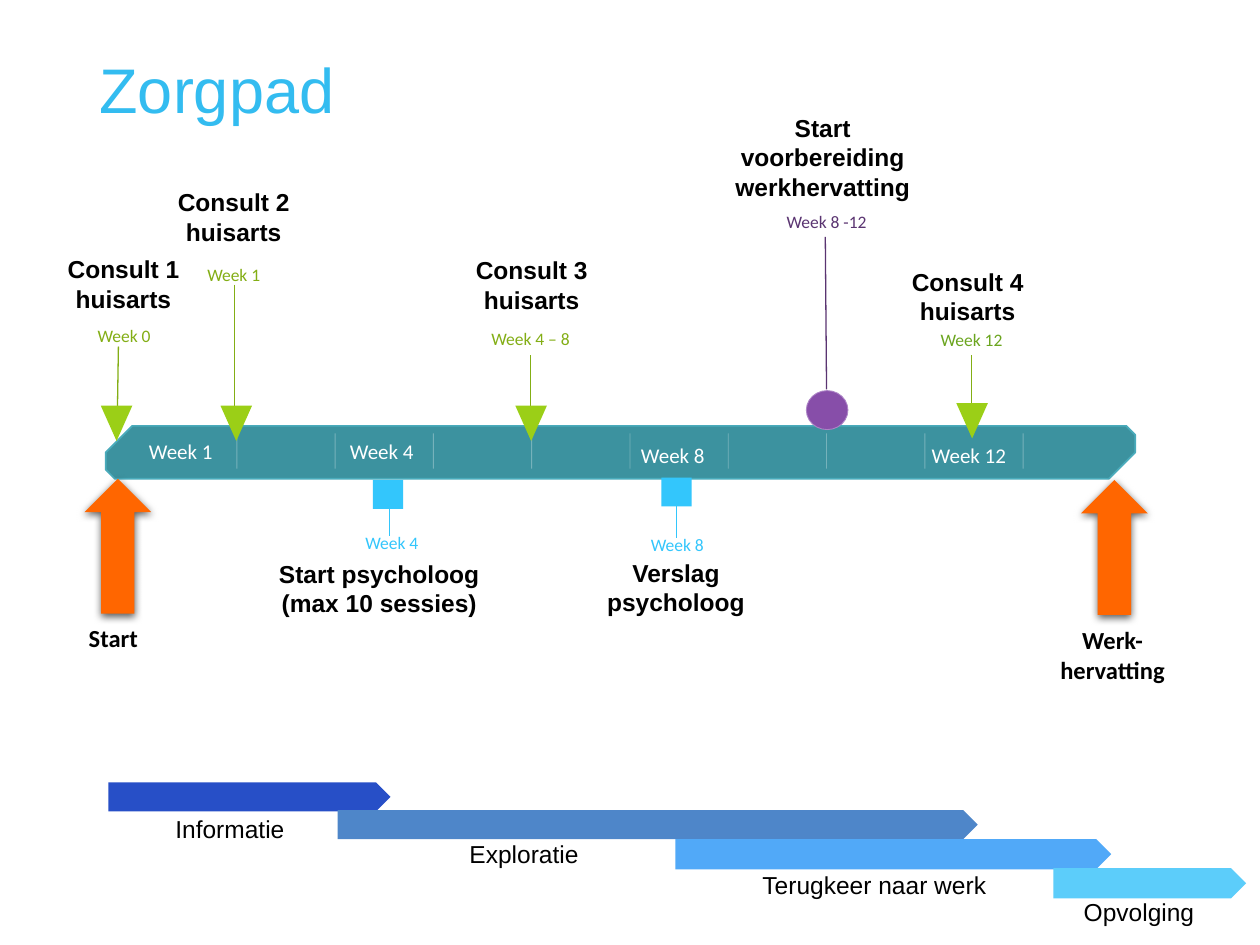
from lxml.etree import SubElement
from pptx import Presentation
from pptx.dml.color import RGBColor as Rgb
from pptx.enum.shapes import MSO_CONNECTOR as Link, MSO_SHAPE as Kind
from pptx.enum.text import MSO_ANCHOR as Anchor, PP_ALIGN as Align
from pptx.oxml.ns import qn
from pptx.util import Inches, Pt

COLS, ROWS = 100, 75
CELL = Inches(0.1)
HUES = {
    "title": "33BCF0", "text": "000000", "white": "FFFFFF",
    "bar": "3C929F", "edge": "4AABBB", "lime": "9BCF17",
    "green": "83AE15", "leaf": "6BA51F", "sky": "33C6FC",
    "plum": "5A3471", "dot": "874EA9", "rim": "AD84C6",
    "arrow": "FF6600", "info": "274FC7", "explore": "4E86C9",
    "back": "51A9F8", "follow": "5CCDFA",
}


def grid(*cells):
    return [round(n * CELL) for n in cells]


def hue(name):
    return Rgb.from_string(HUES[name])


def add_form(slide, kind, box, fill, edge=None, width=1):
    form = slide.shapes.add_shape(kind, *grid(*box))
    form.shadow.inherit = False
    form.fill.solid()
    form.fill.fore_color.rgb = hue(fill)
    if edge:
        form.line.color.rgb = hue(edge)
        form.line.width = Pt(width)
    else:
        form.line.fill.background()
    return form


def add_line(slide, start, end, color, width=0.75, alpha=None):
    line = slide.shapes.add_connector(Link.STRAIGHT, *grid(*start, *end))
    line.line.color.rgb = hue(color)
    line.line.width = Pt(width)
    props = line._element.spPr
    SubElement(props, qn("a:effectLst"))
    if alpha:
        tint = props.find(".//" + qn("a:srgbClr"))
        SubElement(tint, qn("a:alpha"), val=str(alpha * 1000))


def add_text(slide, mid, size, text, pt, color="text", font="Arial",
             bold=False, align=Align.CENTER):
    (x, y), (w, h) = mid, size
    frame = slide.shapes.add_textbox(*grid(x - w / 2, y - h / 2, w, h)).text_frame
    frame.word_wrap = True
    frame.vertical_anchor = Anchor.MIDDLE
    frame.margin_left = frame.margin_right = 0
    frame.margin_top = frame.margin_bottom = 0
    frame.text = text
    for para in frame.paragraphs:
        para.alignment = align
        para.font.size = Pt(pt)
        para.font.name = font
        para.font.bold = bold
        para.font.color.rgb = hue(color)


def add_week(slide, mid, text, color, pt=10):
    add_text(slide, mid, (8.4, 2), text, pt, color, "Calibri")


def add_head(slide, mid, width, text, rows=2, font="Arial"):
    add_text(slide, mid, (width, rows * 2.4), text, 14, font=font, bold=True)


def add_stems(slide):
    for start, end, color in [
        ((30.9, 38.7), (30.9, 42.5), "sky"),
        ((53.7, 39), (53.7, 42.7), "sky"),
        ((9.4, 27.5), (9.3, 33.9), "green"),
        ((18.6, 22.6), (18.6, 33.7), "green"),
        ((42.1, 28.2), (42.1, 32.2), "green"),
        ((77.1, 28.2), (77.1, 33.8), "green"),
        ((65.5, 18.8), (65.6, 30.9), "plum"),
    ]:
        add_line(slide, start, end, color)


def add_bar(slide):
    bar = add_form(slide, Kind.SNIP_2_DIAG_RECTANGLE,
                   (8.4, 33.8, 81.7, 4.2), "bar", "edge")
    bar.adjustments[0], bar.adjustments[1] = 1, 0.17
    for step in range(9):
        x = 18.8 + 7.8 * step
        add_line(slide, (x, 34.4), (x, 37.2), "white", 0.5, 30)
    for mid, text in [((14.35, 35.8), "Week 1"), ((30.3, 35.8), "Week 4"),
                      ((53.4, 36.1), "Week 8"), ((76.9, 36.1), "Week 12")]:
        add_week(slide, mid, text, "white", 12)


def add_visits(slide):
    for num, head, mid, week, color, tip in [
        (1, (9.8, 22.5), (9.85, 26.6), "Week 0", "green", (8, 32.2)),
        (2, (18.55, 17.2), (18.55, 21.8), "Week 1", "green", (17.5, 32.2)),
        (3, (42.2, 22.6), (42.1, 26.9), "Week 4 – 8", "green", (40.9, 32.2)),
        (4, (76.8, 23.5), (77.1, 26.95), "Week 12", "leaf", (75.9, 32)),
    ]:
        add_form(slide, Kind.ISOSCELES_TRIANGLE, (*tip, 2.5, 2.8), "lime").rotation = 180
        add_head(slide, head, 9.8, f"Consult {num} huisarts")
        add_week(slide, mid, week, color)


def add_steps(slide):
    for box, mid, week, head, width, text in [
        ((29.6, 38.1), (31.1, 43.05), "Week 4", (30.1, 46.7), 16.8,
         "Start psycholoog (max 10 sessies)"),
        ((52.5, 37.9), (53.75, 43.2), "Week 8", (53.65, 46.6), 15.9,
         "Verslag psycholoog"),
    ]:
        add_form(slide, Kind.RECTANGLE, (*box, 2.4, 2.3), "sky")
        add_week(slide, mid, week, "sky")
        add_head(slide, head, width, text)
    add_form(slide, Kind.OVAL, (64, 31, 3.3, 3.1), "dot", "rim", 0.5)
    add_week(slide, (65.6, 17.6), "Week 8 -12", "plum")
    add_head(slide, (65.3, 12.45), 14, "Start voorbereiding werkhervatting", 3)


def add_ends(slide):
    for x, y, mid, text, rows in [
        (6.7, 38, (9, 50.6), "Start", 1),
        (85.8, 38.1, (88.3, 51.95), "Werk-\nhervatting", 2),
    ]:
        arrow = add_form(slide, Kind.UP_ARROW, (x, y, 5.3, 10.7), "arrow")
        glow = SubElement(arrow._element.spPr.find(qn("a:effectLst")),
                          qn("a:outerShdw"), blurRad=str(Pt(4.5)),
                          dist=str(Pt(1.5)), dir="5400000", rotWithShape="0")
        tint = SubElement(glow, qn("a:srgbClr"), val=HUES["text"])
        SubElement(tint, qn("a:alpha"), val="63000")
        add_head(slide, mid, 10.4, text, rows, "Calibri")


def add_phases(slide):
    for box, color, mid, text in [
        ((8.6, 62.1, 22.4, 2.3), "info", (18.25, 65.8), "Informatie"),
        ((26.8, 64.3, 50.8, 2.3), "explore", (41.6, 67.75), "Exploratie"),
        ((53.6, 66.6, 34.6, 2.4), "back", (69.4, 70.2), "Terugkeer naar werk"),
        ((83.6, 68.9, 15.3, 2.4), "follow", (90.4, 72.35), "Opvolging"),
    ]:
        add_form(slide, Kind.PENTAGON, box, color)
        add_text(slide, mid, (19, 2.4), text, 14)


def main():
    deck = Presentation()
    deck.slide_width, deck.slide_height = grid(COLS, ROWS)
    slide = deck.slides.add_slide(deck.slide_layouts[6])
    add_text(slide, (51, 7), (86.2, 6), "Zorgpad", 36, "title", align=Align.LEFT)
    for draw in (add_stems, add_bar, add_visits, add_steps, add_ends, add_phases):
        draw(slide)
    deck.save("out.pptx")


if __name__ == "__main__":
    main()
